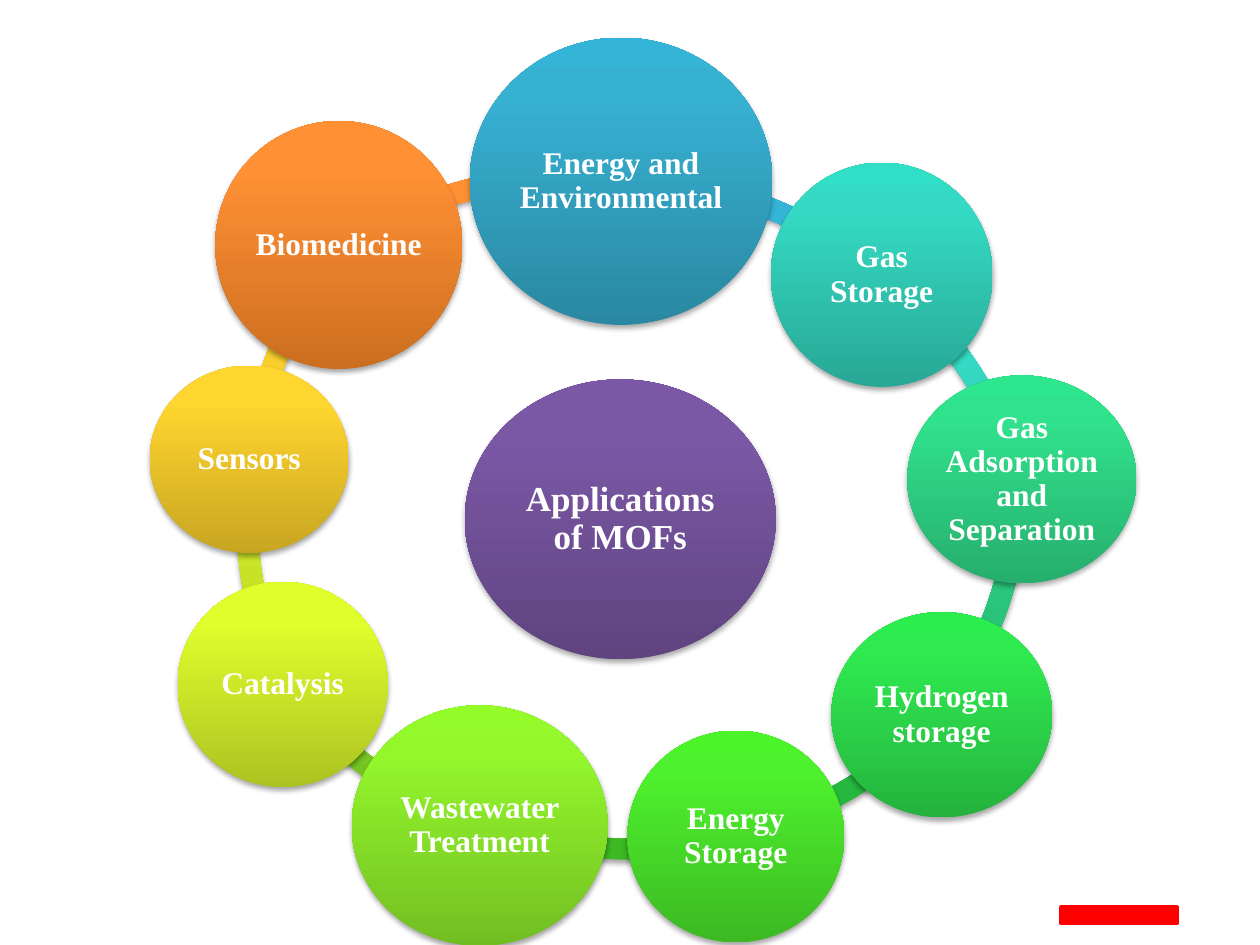
from copy import deepcopy

from lxml import etree
from pptx import Presentation
from pptx import util as u
from pptx.dml.color import RGBColor
from pptx.enum import shapes, text
from pptx.oxml import ns

FONT = "Times New Roman"
ARC_SIZE = 13.82
ARC_THICKNESS = 0.031

# Centre: label, (left, top, width, height) in cm, gradient from bottom to top
HUB = ("Applications of MOFs", (9.37, 7.65, 6.27, 5.64), "5F4480 7B58A6 7C57A8")

# Ring, clockwise from the top: label, circle box, gradient,
# then the link back to the next circle: left, top, start and end in degrees
APPLICATIONS = [
    ("Energy and Environmental", (9.47, 0.76, 6.1, 5.79),
     "2A88A2 37B1D2 34B4D6", (6.17, 3.53, 265.22, 313.81)),
    ("Gas Storage", (15.54, 3.28, 4.47, 4.52),
     "28A896 34DAC3 31DEC6", (7.04, 4.24, 304.33, 347.39)),
    ("Gas Adsorption and Separation", (18.29, 7.57, 4.62, 4.19),
     "26AE6D 31E28D 2EE68E", (6.88, 3.1, 357.05, 40.18)),
    ("Hydrogen storage", (16.76, 12.34, 4.45, 4.14),
     "25B33E 2FE950 2CED4E", (6.76, 3.25, 38.66, 80.21)),
    ("Energy Storage", (12.65, 14.73, 4.37, 4.27),
     "3CB923 4EF12D 4CF52A", (5.74, 3.51, 69.96, 114.69)),
    ("Wastewater Treatment", (7.09, 14.22, 5.16, 4.85),
     "72BE22 94F72C 94FC29", (4.47, 3.15, 104.73, 146.75)),
    ("Catalysis", (3.58, 11.73, 4.24, 4.14),
     "ACC322 E0FD2C E2FF2B", (4.78, 3.68, 151.81, 191.28)),
    ("Sensors", (3.02, 7.37, 4.01, 3.78),
     "C8A621 FFD52F FFD531", (4.9, 2.74, 183.37, 221.52)),
    ("Biomedicine", (4.34, 2.44, 4.98, 5),
     "CC6E20 FF9034 FF9136", (4.22, 3.4, 229.59, 281.66)),
]


def color(hex_value):
    return RGBColor.from_string(hex_value)


def add_shape(slide, kind, box):
    shape = slide.shapes.add_shape(kind, *(u.Cm(length) for length in box))
    shape.shadow.inherit = False
    return shape


def shade(shape, gradient):
    """Give a shape its three-stop gradient and soft shadow, without outline."""
    shape.line.fill.background()
    shape.fill.gradient()
    shape.fill.gradient_angle = 90
    properties = shape._element.spPr
    stop_list = properties.find(".//" + ns.qn("a:gsLst"))
    stop_list.append(deepcopy(stop_list[-1]))
    stops = shape.fill.gradient_stops
    for stop, position, hex_value in zip(stops, (0, 0.8, 1), gradient.split()):
        stop.position = position
        stop.color.rgb = color(hex_value)

    effects = properties.find(ns.qn("a:effectLst"))
    shadow = etree.SubElement(effects, ns.qn("a:outerShdw"), blurRad="40000",
                              dist="23000", dir="5400000", rotWithShape="0")
    black = etree.SubElement(shadow, ns.qn("a:srgbClr"), val="000000")
    etree.SubElement(black, ns.qn("a:alpha"), val="35000")


def add_circle(slide, label, box, gradient, size):
    circle = add_shape(slide, shapes.MSO_SHAPE.OVAL, box)
    shade(circle, gradient)
    frame = circle.text_frame
    frame.word_wrap = True
    frame.vertical_anchor = text.MSO_ANCHOR.MIDDLE
    frame.margin_left = frame.margin_right = u.Cm(0.05)
    frame.margin_top = frame.margin_bottom = u.Cm(0.05)
    paragraph = frame.paragraphs[0]
    paragraph.text = label
    paragraph.alignment = text.PP_ALIGN.CENTER
    paragraph.line_spacing = 0.9
    paragraph.font.name = FONT
    paragraph.font.size = u.Pt(size)
    paragraph.font.bold = True
    paragraph.font.color.rgb = color("FFFFFF")


def add_link(slide, link, gradient):
    left, top, start, end = link
    arc = add_shape(slide, shapes.MSO_SHAPE.BLOCK_ARC,
                    (left, top, ARC_SIZE, ARC_SIZE))
    # Angles are stored in 60000ths of a degree, adjustments in 100000ths
    arc.adjustments[0] = start * 0.6
    arc.adjustments[1] = end * 0.6
    arc.adjustments[2] = ARC_THICKNESS
    shade(arc, gradient)


def add_radial_cycle(slide, left, top):
    # Links lie behind the circles
    for _, _, gradient, (x, y, start, end) in reversed(APPLICATIONS):
        add_link(slide, (left + x, top + y, start, end), gradient)

    # Centre and ring of circles
    circles = [(*HUB, 20)] + [(*item[:3], 18) for item in APPLICATIONS]
    for label, (x, y, width, height), gradient, size in circles:
        add_circle(slide, label, (left + x, top + y, width, height), gradient, size)


def add_footer_bar(slide, box):
    bar = add_shape(slide, shapes.MSO_SHAPE.RECTANGLE, box)
    bar.fill.solid()
    bar.fill.fore_color.rgb = color("FF0000")
    bar.line.color.rgb = color("FF0000")
    bar.line.width = u.Pt(2)


def main():
    deck = Presentation()
    deck.slide_width, deck.slide_height = u.Cm(25.4), u.Cm(19.05)
    slide = deck.slides.add_slide(deck.slide_layouts[6])
    add_footer_bar(slide, (21.39, 18.29, 2.34, 0.33))
    add_radial_cycle(slide, 0, 0)
    deck.save("out.pptx")


if __name__ == "__main__":
    main()
